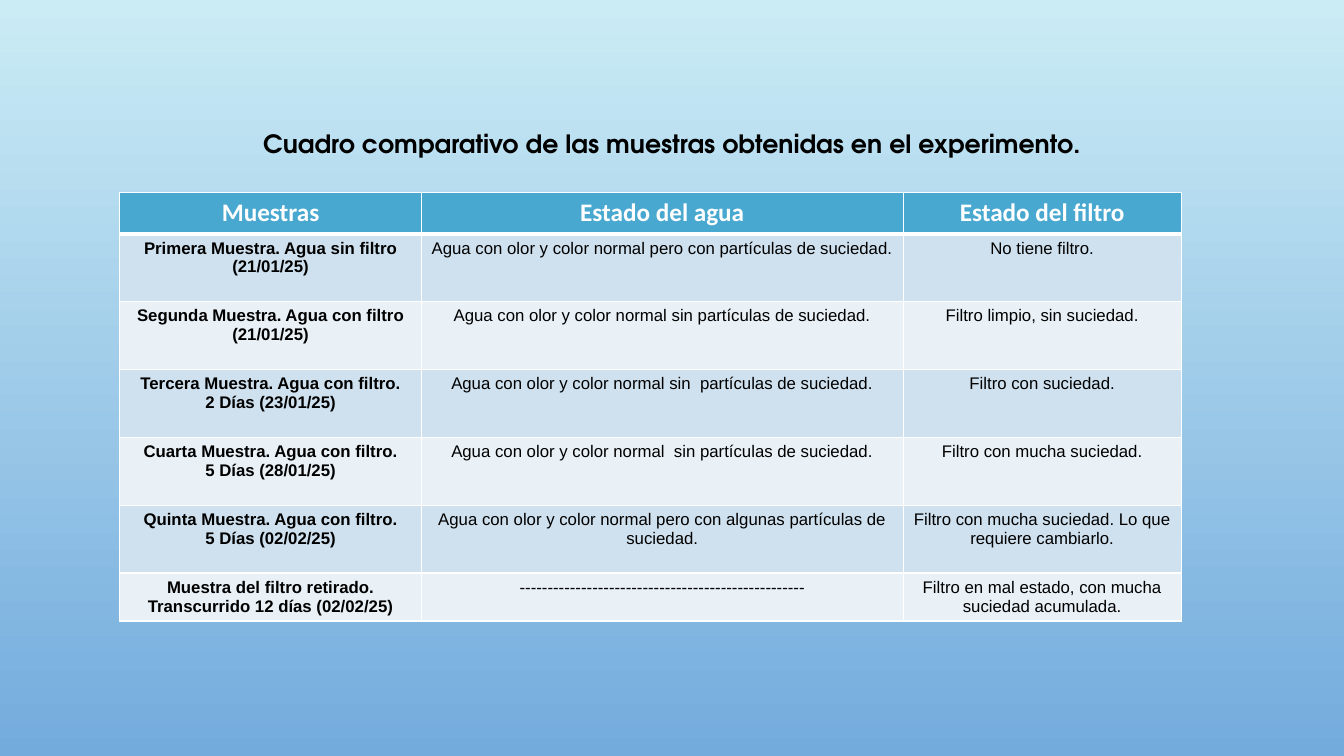
"""Build the slide comparing the water samples of the filter experiment."""
import pptx
import pptx.dml.color
import pptx.enum.text
import pptx.oxml
import pptx.oxml.ns
import pptx.util
from pptx.util import Cm

HEADER_FILL = "48A8D0"
BAND_FILLS = ["CFE1EE", "E9F1F7"]
HEADER_FORMAT = {"name": "Calibri", "size": pptx.util.Pt(18), "bold": True}
SAMPLE_FORMAT = {"name": "Arial", "size": pptx.util.Pt(12), "bold": True}
STATE_FORMAT = {"name": "Arial", "size": pptx.util.Pt(12), "bold": False}
TITLE_FORMAT = {"name": "TeX Gyre Adventor", "size": pptx.util.Pt(18), "bold": True}

COLUMN_WIDTHS = [7.6, 12.14, 7.01]
ROW_HEIGHTS = [1.04] + [1.71] * 5 + [1.21]
ROWS = [
    ["Muestras", "Estado del agua", "Estado del filtro"],
    ["Primera Muestra. Agua sin filtro\n(21/01/25)",
     "Agua con olor y color normal pero con partículas de suciedad.",
     "No tiene filtro."],
    ["Segunda Muestra. Agua con filtro\n(21/01/25)",
     "Agua con olor y color normal sin partículas de suciedad.",
     "Filtro limpio, sin suciedad."],
    ["Tercera Muestra. Agua con filtro.\n2 Días (23/01/25)",
     "Agua con olor y color normal sin  partículas de suciedad.",
     "Filtro con suciedad."],
    ["Cuarta Muestra. Agua con filtro.\n5 Días (28/01/25)",
     "Agua con olor y color normal  sin partículas de suciedad.",
     "Filtro con mucha suciedad."],
    ["Quinta Muestra. Agua con filtro.\n5 Días (02/02/25)",
     "Agua con olor y color normal pero con algunas partículas de suciedad.",
     "Filtro con mucha suciedad. Lo que requiere cambiarlo."],
    ["Muestra del filtro retirado. Transcurrido 12 días (02/02/25)",
     "-" * 51,
     "Filtro en mal estado, con mucha suciedad acumulada."],
]


def color(hex_string):
    """Return the colour named by a hex string."""
    return pptx.dml.color.RGBColor.from_string(hex_string)


def write(frame, text, font_format, font_color):
    """Fill a text frame with centred paragraphs in one format."""
    frame.text = text
    for para in frame.paragraphs:
        para.alignment = pptx.enum.text.PP_ALIGN.CENTER
        for span in para.runs:
            for attribute, value in font_format.items():
                setattr(span.font, attribute, value)
            span.font.color.rgb = color(font_color)


deck = pptx.Presentation()
deck.slide_width = Cm(33.87)
deck.slide_height = Cm(19.05)
page = deck.slides.add_slide(deck.slide_layouts[6])

backdrop = page.background.fill
backdrop.gradient()
backdrop.gradient_angle = 270
for stop, shade in zip(backdrop.gradient_stops, ["CBECF5", "73ABDD"]):
    stop.color.rgb = color(shade)

table = page.shapes.add_table(
    len(ROWS), len(COLUMN_WIDTHS), Cm(3.02), Cm(4.85),
    Cm(sum(COLUMN_WIDTHS)), Cm(sum(ROW_HEIGHTS))).table
for column, width in zip(table.columns, COLUMN_WIDTHS):
    column.width = Cm(width)
for row, height in zip(table.rows, ROW_HEIGHTS):
    row.height = Cm(height)

for row_index, texts in enumerate(ROWS):
    is_header = row_index == 0
    border_widths = {"lnL": 1, "lnR": 1,
                     "lnT": 3 if row_index == 1 else 1,
                     "lnB": 3 if is_header else 1}
    for column_index, text in enumerate(texts):
        cell = table.cell(row_index, column_index)
        properties = cell._tc.get_or_add_tcPr()
        for side, points in border_widths.items():
            properties.append(pptx.oxml.parse_xml(
                f'<a:{side} {pptx.oxml.ns.nsdecls("a")} w="{pptx.util.Pt(points)}">'
                f'<a:solidFill><a:srgbClr val="FFFFFF"/></a:solidFill></a:{side}>'))
        cell.fill.solid()
        if is_header:
            cell.fill.fore_color.rgb = color(HEADER_FILL)
            write(cell.text_frame, text, HEADER_FORMAT, "FFFFFF")
        else:
            cell.fill.fore_color.rgb = color(BAND_FILLS[(row_index - 1) % 2])
            cell_format = SAMPLE_FORMAT if column_index == 0 else STATE_FORMAT
            write(cell.text_frame, text, cell_format, "000000")

title_box = page.shapes.add_textbox(0, Cm(3.12), deck.slide_width, Cm(1.03))
title_box.text_frame.word_wrap = True
title_box.text_frame.auto_size = pptx.enum.text.MSO_AUTO_SIZE.SHAPE_TO_FIT_TEXT
write(title_box.text_frame,
      "Cuadro comparativo de las muestras obtenidas en el experimento.",
      TITLE_FORMAT, "000000")

deck.save("out.pptx")
